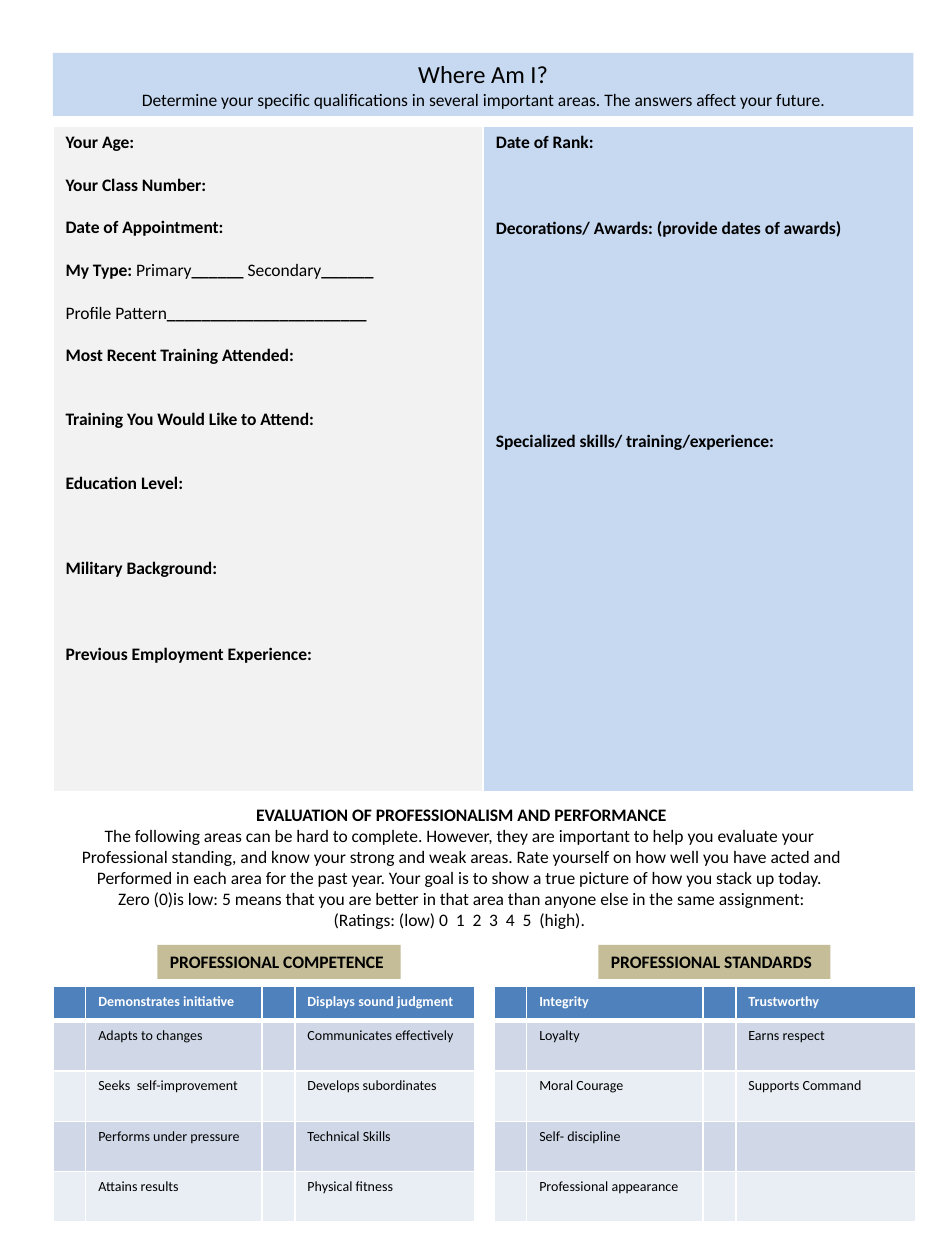
from dataclasses import dataclass

from lxml import etree
from pptx import Presentation
from pptx import util as u
from pptx.dml.color import RGBColor
from pptx.enum import shapes, text
from pptx.oxml.ns import qn


@dataclass(frozen=True)
class Theme:
    font: str = "Calibri"
    ink: str = "000000"
    white: str = "FFFFFF"
    pale_blue: str = "C6D9F1"
    grey: str = "F2F2F2"
    tan: str = "C4BD97"
    header: str = "4F81BD"
    bands: tuple = ("D0D8E8", "E9EDF4")
    title: int = 14
    body: int = 10
    small: int = 8
    line: float = 12.2  # height of one body line, in points


@dataclass(frozen=True)
class Prompt:
    runs: tuple  # (wording, bold) pairs
    gap: int = 1  # empty writing lines above


@dataclass(frozen=True)
class RatingTable:
    left: float
    labels: tuple  # header first


T = Theme()
MARGIN, WIDTH = 0.42, 6.83


def ask(label: str, gap: int = 1) -> Prompt:
    return Prompt(((label, True),), gap)


PERSONAL = (
    ask("Your Age:", 0),
    ask("Your Class Number:"),
    ask("Date of Appointment:"),
    Prompt((("My Type: ", True), ("Primary", False), ("______ ", True),
            ("Secondary", False), ("______", True))),
    Prompt((("Profile Pattern", False), ("_" * 23, True))),
    ask("Most Recent Training Attended:"),
    ask("Training You Would Like to Attend:", 2),
    ask("Education Level:", 2),
    ask("Military Background:", 3),
    ask("Previous Employment Experience:", 3),
)
SERVICE = (
    ask("Date of Rank:", 0),
    ask("Decorations/ Awards: (provide dates of awards)", 3),
    ask("Specialized skills/ training/experience:", 9),
)
INSTRUCTIONS = (
    "EVALUATION OF PROFESSIONALISM AND PERFORMANCE",
    "The following areas can be hard to complete. However, they are important to help you evaluate your ",
    "Professional standing, and know your strong and weak areas. Rate yourself on how well you have acted and",
    "Performed in each area for the past year. Your goal is to show a true picture of how you stack up today. ",
    "Zero (0)is low: 5 means that you are better in that area than anyone else in the same assignment:",
    "(Ratings: (low) 0  1  2  3  4  5  (high). ",
)
RATINGS = (
    RatingTable(0.42, ("Demonstrates initiative", "Adapts to changes", "Seeks  self-improvement",
                       "Performs under pressure", "Attains results")),
    RatingTable(2.08, ("Displays sound judgment", "Communicates effectively", "Develops subordinates",
                       "Technical Skills", "Physical fitness")),
    RatingTable(3.92, ("Integrity", "Loyalty", "Moral Courage",
                       "Self- discipline", "Professional appearance")),
    RatingTable(5.58, ("Trustworthy", "Earns respect", "Supports Command", "", "")),
)


def style_run(r, size: float, bold: bool = False, color: str = T.ink) -> None:
    r.font.name, r.font.size, r.font.bold = T.font, u.Pt(size), bold
    r.font.color.rgb = RGBColor.from_string(color)


def paint(sp, color: str) -> None:
    sp.fill.solid()
    sp.fill.fore_color.rgb = RGBColor.from_string(color)


def place(sp, left: float, top: float, width: float, height: float) -> None:
    sp.left, sp.top = u.Inches(left), u.Inches(top)
    sp.width, sp.height = u.Inches(width), u.Inches(height)


def style_cell(cell, fill: str, bottom: float = 1) -> None:
    """White borders, then the fill."""
    tc_pr = cell._tc.get_or_add_tcPr()
    for side, width in (("L", 1), ("R", 1), ("T", 1), ("B", bottom)):
        ln = etree.SubElement(tc_pr, qn(f"a:ln{side}"), w=str(u.Pt(width)))
        solid = etree.SubElement(ln, qn("a:solidFill"))
        etree.SubElement(solid, qn("a:srgbClr"), val=T.white)
    paint(cell, fill)


def add_grid(s, left: float, top: float, cols: list, rows: list):
    frame = s.shapes.add_table(len(rows), len(cols), u.Inches(left), u.Inches(top),
                               u.Inches(sum(cols)), u.Inches(sum(rows)))
    tbl = frame.table
    tbl.first_row = tbl.horz_banding = False
    for col, width in zip(tbl.columns, cols):
        col.width = u.Inches(width)
    for row, height in zip(tbl.rows, rows):
        row.height = u.Inches(height)
    return tbl


def write_prompts(cell, prompts: tuple, fill: str) -> None:
    style_cell(cell, fill, bottom=3)
    tf = cell.text_frame
    for i, prompt in enumerate(prompts):
        p = tf.add_paragraph() if i else tf.paragraphs[0]
        p.space_before = u.Pt(prompt.gap * T.line)
        for wording, bold in prompt.runs:
            r = p.add_run()
            r.text = wording
            style_run(r, T.body, bold)


def add_rating_table(s, spec_table: RatingTable) -> None:
    tbl = add_grid(s, spec_table.left, 7.83, [0.26, 1.43], [0.27] + [0.4] * 4)
    for i, label in enumerate(spec_table.labels):
        head = i == 0
        fill = T.header if head else T.bands[(i - 1) % 2]
        for cell, wording in zip(tbl.rows[i].cells, ("", label)):
            style_cell(cell, fill, bottom=3 if head else 1)
            p = cell.text_frame.paragraphs[0]
            if wording:
                p.text = wording
                style_run(p.runs[0], T.small, head, T.white if head else T.ink)
            else:  # keeps an empty cell from stretching its row
                etree.SubElement(p._p, qn("a:endParaRPr"), sz=str(T.small * 100))


def add_label(s, left: float, width: float, wording: str) -> None:
    sp = s.shapes.add_shape(shapes.MSO_SHAPE.RECTANGLE, u.Inches(left), u.Inches(7.5),
                            u.Inches(width), u.Inches(0.27))
    sp.shadow.inherit = False
    paint(sp, T.tan)
    sp.line.fill.background()
    tf = sp.text_frame
    tf.word_wrap = False
    tf.text = wording
    tf.paragraphs[0].alignment = text.PP_ALIGN.LEFT
    style_run(tf.paragraphs[0].runs[0], T.body, True)


def write_centred(tf, lines: tuple, sizes: list, bold_first: bool) -> None:
    tf.text = "\n".join(lines)
    for i, (p, size) in enumerate(zip(tf.paragraphs, sizes)):
        p.alignment = text.PP_ALIGN.CENTER
        style_run(p.runs[0], size, bold_first and i == 0)


def main() -> None:
    prs = Presentation()
    prs.slide_width, prs.slide_height = u.Inches(7.5), u.Inches(10)
    s = prs.slides.add_slide(prs.slide_layouts[5])

    # Title band
    sp = s.shapes.title
    place(sp, MARGIN, 0.42, WIDTH, 0.5)
    paint(sp, T.pale_blue)
    tf = sp.text_frame
    tf.auto_size = text.MSO_AUTO_SIZE.NONE
    tf.vertical_anchor = text.MSO_ANCHOR.TOP
    write_centred(tf, ("Where Am I?", "Determine your specific qualifications in several important "
                       "areas. The answers affect your future."), [T.title, T.body], False)

    # Personal record
    tbl = add_grid(s, MARGIN, 1, [WIDTH / 2] * 2, [5.3])
    write_prompts(tbl.cell(0, 0), PERSONAL, T.grey)
    write_prompts(tbl.cell(0, 1), SERVICE, T.pale_blue)

    # Evaluation instructions
    sp = s.shapes.add_textbox(u.Inches(0.5), u.Inches(6.33), u.Inches(6.32), u.Inches(1.11))
    sp.text_frame.word_wrap = False
    write_centred(sp.text_frame, INSTRUCTIONS, [T.body] * len(INSTRUCTIONS), True)

    # Self-rating tables and their labels
    for rating in RATINGS:
        add_rating_table(s, rating)
    add_label(s, 1.25, 1.93, "PROFESSIONAL COMPETENCE")
    add_label(s, 4.75, 1.84, "PROFESSIONAL STANDARDS")

    prs.save("out.pptx")


if __name__ == "__main__":
    main()
